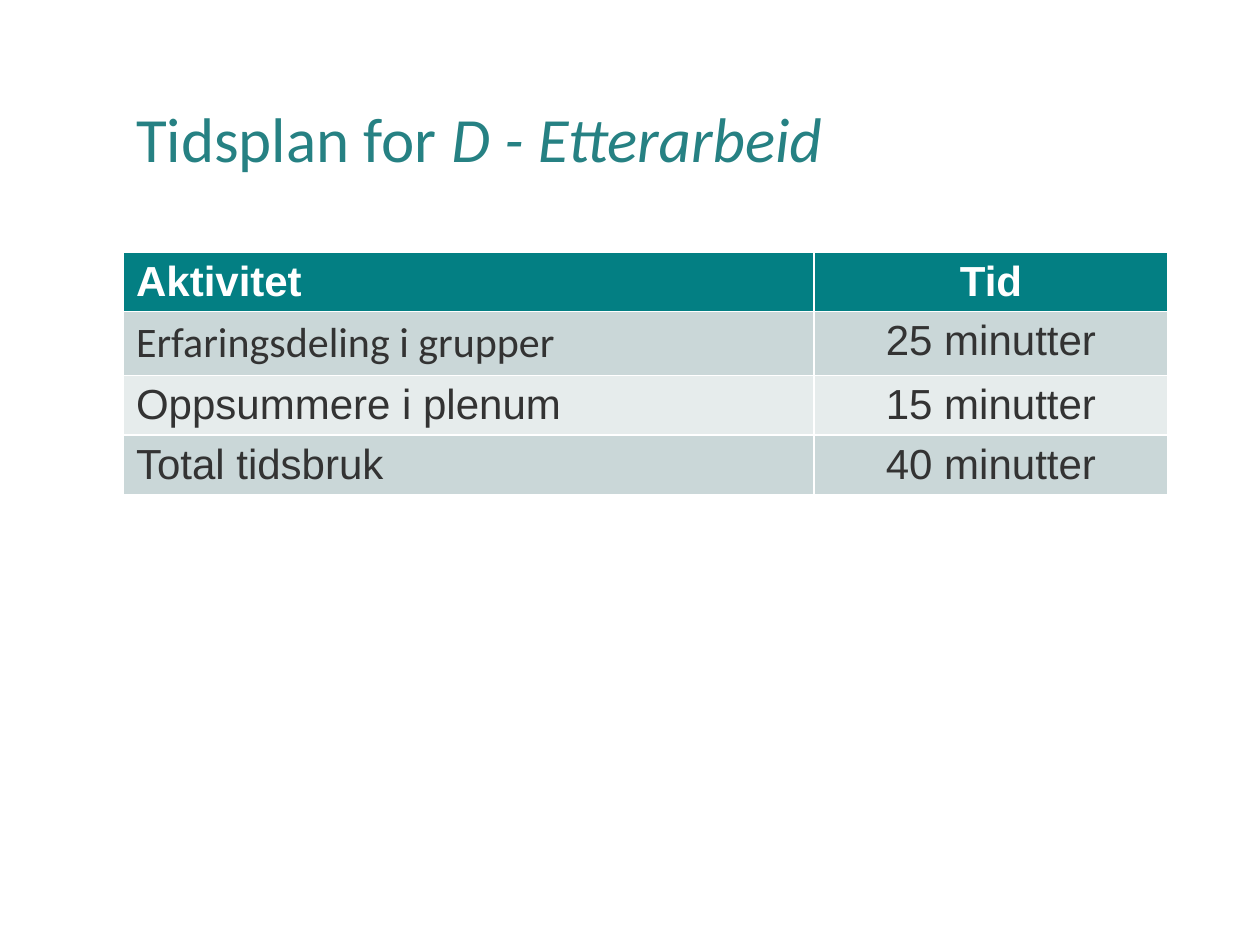
from typing import NamedTuple

from pptx import Presentation
from pptx.dml.color import RGBColor
from pptx.enum.text import MSO_ANCHOR, PP_ALIGN
from pptx.util import Inches, Pt

LEFT, CENTER = PP_ALIGN.LEFT, PP_ALIGN.CENTER
MIDDLE = MSO_ANCHOR.MIDDLE

MARGIN, WIDTH = 0.98, 8.29
COL_WIDTHS = (5.48, 2.81)
ROW_HEIGHT = 0.41
TEAL, TITLE_TEAL = "037F83", "268183"
BANDS = ("CAD7D8", "E6ECEC")
WHITE, DARK = "FFFFFF", "333333"


class Activity(NamedTuple):
    name: str
    time: str
    name_font: str = "Arial"


HEADER = Activity("Aktivitet", "Tid")
ACTIVITIES = (
    Activity("Erfaringsdeling i grupper", "25 minutter", "Calibri"),
    Activity("Oppsummere i plenum", "15 minutter"),
    Activity("Total tidsbruk", "40 minutter"),
)


def rgb(color: str) -> RGBColor:
    return RGBColor.from_string(color)


def set_font(font, name: str, size: float, color: str, bold: bool = False) -> None:
    font.name, font.size, font.bold = name, Pt(size), bold
    font.color.rgb = rgb(color)


def add_title(slide) -> None:
    title = slide.shapes.title
    title.left, title.top = Inches(MARGIN), Inches(0.4)
    title.width, title.height = Inches(WIDTH), Inches(1.45)
    tf = title.text_frame
    tf.word_wrap = True
    tf.vertical_anchor = MIDDLE
    p = tf.paragraphs[0]
    p.alignment, p.line_spacing = LEFT, 0.9
    set_font(p.font, "Calibri", 36, TITLE_TEAL)
    p.add_run().text = "Tidsplan for "
    r = p.add_run()
    r.text = "D - Etterarbeid"
    r.font.italic = True


def fill_cell(cell, text: str, font: str, align, fill: str, color: str, bold: bool) -> None:
    cell.fill.solid()
    cell.fill.fore_color.rgb = rgb(fill)
    p = cell.text_frame.paragraphs[0]
    p.alignment = align
    set_font(p.font, font, 24, color, bold)
    r = p.add_run()
    r.text = text
    set_font(r.font, font, 24, color, bold)


def add_schedule(slide) -> None:
    rows = (HEADER, *ACTIVITIES)
    table = slide.shapes.add_table(
        len(rows), len(COL_WIDTHS), Inches(MARGIN), Inches(2),
        Inches(WIDTH), Inches(ROW_HEIGHT * len(rows))).table
    for column, width in zip(table.columns, COL_WIDTHS):
        column.width = Inches(width)
    for i, row in enumerate(rows):
        is_header = i == 0
        fill = TEAL if is_header else BANDS[(i - 1) % 2]
        color = WHITE if is_header else DARK
        fill_cell(table.cell(i, 0), row.name, row.name_font, LEFT, fill, color, is_header)
        fill_cell(table.cell(i, 1), row.time, "Arial", CENTER, fill, color, is_header)


def main() -> None:
    prs = Presentation()
    prs.slide_width, prs.slide_height = Inches(10), Inches(7.5)
    slide = prs.slides.add_slide(prs.slide_layouts[5])
    add_title(slide)
    add_schedule(slide)
    prs.save("out.pptx")


if __name__ == "__main__":
    main()
